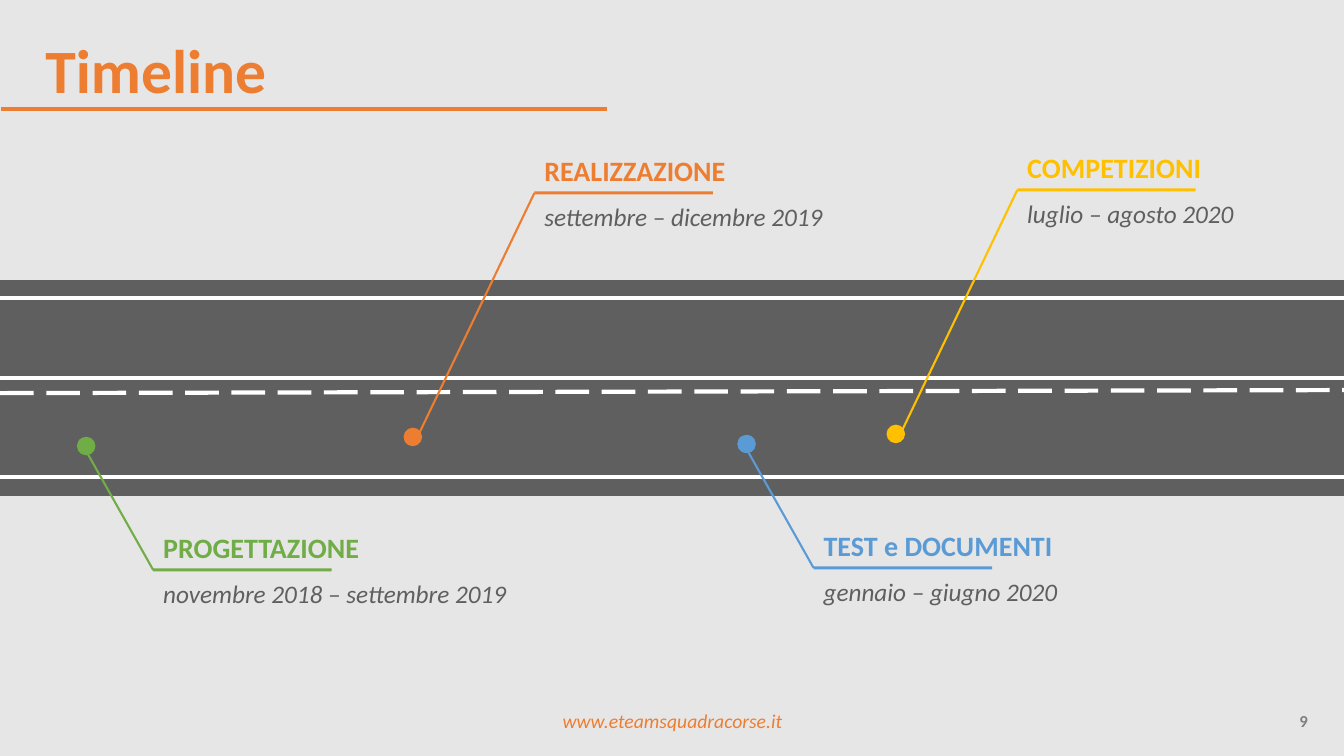
from dataclasses import dataclass

from lxml import etree
from pptx import Presentation
from pptx import util as u
from pptx.dml.color import RGBColor
from pptx.enum import dml, shapes, text
from pptx.oxml.ns import qn


@dataclass(frozen=True)
class Theme:
    font: str = "Calibri"
    background: str = "E7E6E6"
    road: str = "5F5F5F"
    white: str = "FFFFFF"
    muted: str = "7F7F7F"
    orange: str = "ED7D31"
    green: str = "70AD47"
    blue: str = "5B9BD5"
    yellow: str = "FFC000"
    title_size: int = 44
    label_size: int = 20
    date_size: int = 18
    footer_size: int = 14
    number_size: int = 12


class TimelineSlide:
    def __init__(self, prs, theme):
        self.theme = theme
        self.s = prs.slides.add_slide(prs.slide_layouts[5])
        fill = self.s.background.fill
        fill.solid()
        fill.fore_color.rgb = RGBColor.from_string(theme.background)

    def set_text(self, sp, words, size, color, bold=False, italic=False,
                 align=text.PP_ALIGN.LEFT, anchor=text.MSO_ANCHOR.TOP,
                 wrap=True):
        tf = sp.text_frame
        tf.word_wrap = wrap
        tf.vertical_anchor = anchor
        p = tf.paragraphs[0]
        p.alignment = align
        r = p.add_run()
        r.text = words
        r.font.name = self.theme.font
        r.font.size = u.Pt(size)
        r.font.bold = bold
        r.font.italic = italic
        r.font.color.rgb = RGBColor.from_string(color)
        return p

    def title(self, words, x, y, w, h):
        sp = self.s.shapes.title
        sp.left, sp.top, sp.width, sp.height = map(u.Inches, (x, y, w, h))
        p = self.set_text(sp, words, self.theme.title_size, self.theme.orange,
                          bold=True, anchor=text.MSO_ANCHOR.MIDDLE)
        p.line_spacing = 0.9

    def textbox(self, words, x, y, w, h, size, color, **style):
        sp = self.s.shapes.add_textbox(*map(u.Inches, (x, y, w, h)))
        self.set_text(sp, words, size, color, **style)

    def shape(self, kind, x, y, w, h, color, outline=None, parent=None):
        owner = parent or self.s
        sp = owner.shapes.add_shape(kind, *map(u.Inches, (x, y, w, h)))
        sp.shadow.inherit = False
        sp.fill.solid()
        sp.fill.fore_color.rgb = RGBColor.from_string(color)
        if outline:
            sp.line.color.rgb = RGBColor.from_string(color)
            sp.line.width = u.Pt(outline)
        else:
            sp.line.fill.background()
        return sp

    def line(self, x1, y1, x2, y2, color, width, dash=None, parent=None):
        owner = parent or self.s
        ln = owner.shapes.add_connector(shapes.MSO_CONNECTOR.STRAIGHT,
                                        *map(u.Inches, (x1, y1, x2, y2)))
        ln.line.color.rgb = RGBColor.from_string(color)
        ln.line.width = u.Pt(width)
        if dash:
            ln.line.dash_style = dash
        etree.SubElement(ln._element.spPr, qn("a:effectLst"))
        return ln

    def road(self, width):
        group = self.s.shapes.add_group_shape()
        self.shape(shapes.MSO_SHAPE.RECTANGLE, 0, 2.78, width, 2.14,
                   self.theme.road, parent=group)
        for y in (2.96, 4.73, 3.75):
            self.line(0, y, width, y, self.theme.white, 3, parent=group)
        self.line(0, 3.9, width, 3.87, self.theme.white, 3,
                  dash=dml.MSO_LINE.LONG_DASH, parent=group)

    def milestone(self, label, dates, color, x, y, label_w, date_w, above):
        # Offsets: dot from the bar, then leader start from the dot
        dot_dx, dot_dy = (-1.29, 2.35) if above else (-0.75, -1.3)
        start_dx, start_dy = (0.09, 0.17) if above else (0.02, 0.02)
        dot_x, dot_y = x + dot_dx, y + dot_dy
        self.shape(shapes.MSO_SHAPE.FLOWCHART_CONNECTOR, dot_x, dot_y,
                   0.17, 0.17, color, outline=1)
        bar = self.shape(shapes.MSO_SHAPE.RECTANGLE, x, y, 1.77, 0.03, color)
        leader = self.line(dot_x + start_dx, dot_y + start_dy, x, y + 0.02,
                           color, 1.5)
        leader.end_connect(bar, 1)
        self.textbox(label, x, y - 0.43, label_w, 0.44, self.theme.label_size,
                     color, bold=True, wrap=False)
        self.textbox(dates, x, y + 0.05, date_w, 0.4, self.theme.date_size,
                     self.theme.road, italic=True, wrap=False)


def main():
    prs = Presentation()
    prs.slide_width, prs.slide_height = u.Inches(13.33), u.Inches(7.5)
    theme = Theme()
    page = TimelineSlide(prs, theme)

    # Title and footer
    page.line(0.01, 1.08, 6.02, 1.08, theme.orange, 3)
    page.title("Timeline", 0.35, 0.19, 5.67, 1.07)
    page.textbox("www.eteamsquadracorse.it", 4.42, 6.95, 4.5, 0.4,
                 theme.footer_size, theme.orange, italic=True,
                 align=text.PP_ALIGN.CENTER, anchor=text.MSO_ANCHOR.MIDDLE)
    page.textbox("9", 12.47, 6.95, 0.6, 0.4, theme.number_size, theme.muted,
                 bold=True, align=text.PP_ALIGN.RIGHT,
                 anchor=text.MSO_ANCHOR.MIDDLE)

    # Road
    page.road(13.33)

    # Milestones: label, dates, colour, bar position, text widths, side
    milestones = [
        ("PROGETTAZIONE", "novembre 2018 – settembre 2019", theme.green,
         1.52, 5.64, 2.16, 3.65, False),
        ("TEST e DOCUMENTI", "gennaio – giugno 2020", theme.blue,
         8.07, 5.62, 2.49, 2.55, False),
        ("REALIZZAZIONE", "settembre – dicembre 2019", theme.orange,
         5.3, 1.9, 2.01, 3, True),
        ("COMPETIZIONI", "luglio – agosto 2020", theme.yellow,
         10.09, 1.87, 1.94, 2.27, True),
    ]
    for milestone in milestones:
        page.milestone(*milestone)

    prs.save("out.pptx")


if __name__ == "__main__":
    main()
